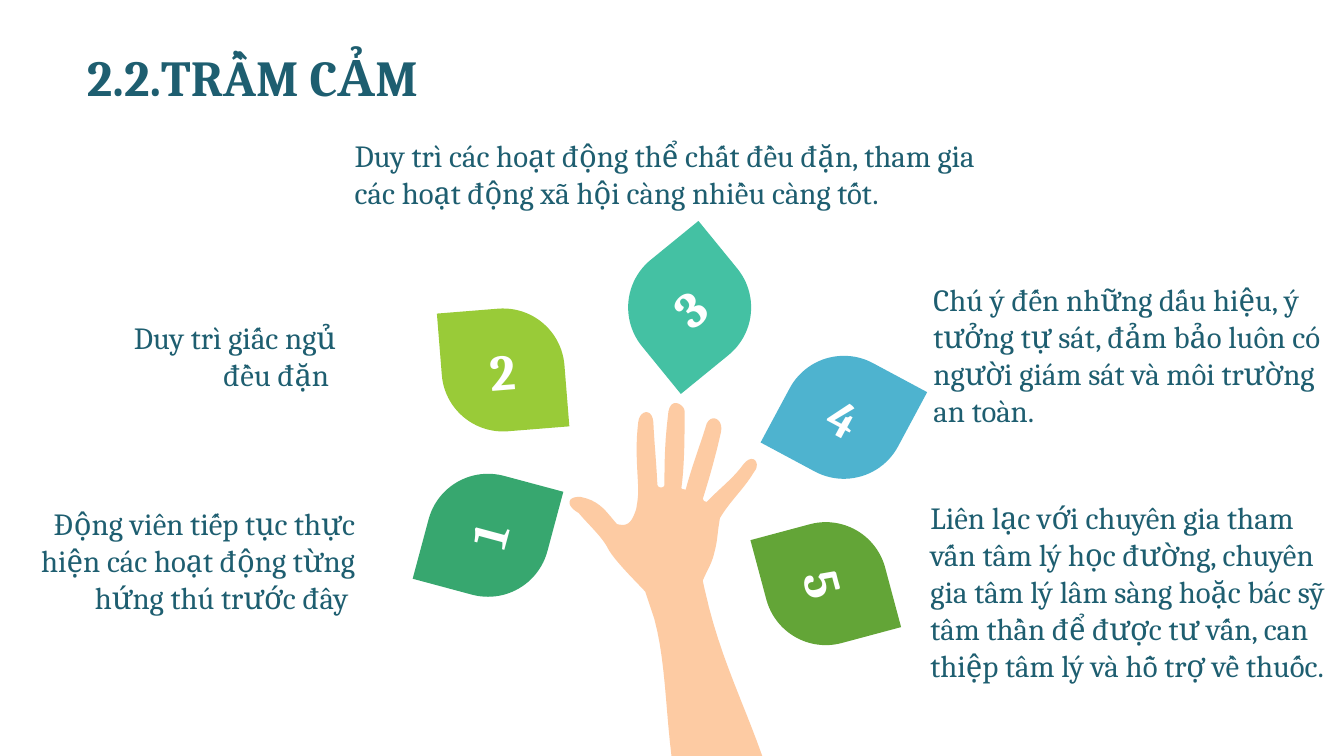
import dataclasses

import pptx
import pptx.dml.color
import pptx.enum.shapes
import pptx.enum.text
import pptx.util

ALIGN = pptx.enum.text.PP_ALIGN
ANCHOR = pptx.enum.text.MSO_ANCHOR
FIT = pptx.enum.text.MSO_AUTO_SIZE
rgb = pptx.dml.color.RGBColor.from_string


@dataclasses.dataclass(frozen=True)
class Theme:
    font: str = "Cambria"
    ink: str = "1E5E70"
    white: str = "FFFFFF"
    skin: str = "FDCBA3"
    leaves: tuple = ("37A76F", "99CB38", "44C1A3", "4EB3CF", "63A537")
    head: int = 36
    body: int = 22


theme = Theme()

# Slide on a grid of 1333 columns and 750 rows
COLS, ROWS = 1333, 750
prs = pptx.Presentation()
prs.slide_width, prs.slide_height = pptx.util.Inches(13.33), pptx.util.Inches(7.5)
cell = prs.slide_width // COLS
slide = prs.slides.add_slide(prs.slide_layouts[5])
shapes = slide.shapes


def grid(*cells):
    return [pptx.util.Emu(n * cell) for n in cells]


def write(sp, text, size=theme.body, color=theme.ink, bold=False,
          align=ALIGN.LEFT, anchor=ANCHOR.TOP, fit=FIT.NONE):
    tf = sp.text_frame
    tf.word_wrap, tf.auto_size, tf.vertical_anchor = True, fit, anchor
    p = tf.paragraphs[0]
    p.alignment = align
    r = p.add_run()
    r.text = text
    r.font.name, r.font.size, r.font.bold = theme.font, pptx.util.Pt(size), bold
    r.font.color.rgb = rgb(color)
    return p


# Title
title = shapes.title
title.left, title.top, title.width, title.height = grid(18, 40, 465, 79)
p = write(title, "2.2.TRẦM CẢM", size=theme.head, bold=True,
          align=ALIGN.CENTER, anchor=ANCHOR.MIDDLE)
p.line_spacing, p.space_before = 0.9, pptx.util.Pt(10)

# Hand: each row is a cubic curve (two controls, end) from the previous end
wrist_left, wrist_right = (666, 750), (756, 750)
curves = [
    (738, 699, 717, 657, 703, 602), (701, 593, 699, 586, 697, 576),
    (702, 564, 706, 560, 709, 546), (712, 534, 711, 532, 714, 514),
    (724, 497, 738, 485, 748, 468), (755, 460, 747, 448, 737, 461),
    (727, 475, 713, 485, 701, 498), (697, 497, 698, 496, 697, 495),
    (704, 473, 710, 451, 715, 429), (718, 416, 706, 410, 701, 420),
    (694, 443, 687, 460, 680, 486), (679, 485, 675, 486, 676, 483),
    (679, 459, 679, 432, 679, 408), (679, 402, 666, 393, 663, 408),
    (660, 433, 659, 449, 659, 481), (659, 484, 653, 485, 652, 481),
    (651, 459, 649, 440, 648, 419), (647, 404, 634, 407, 633, 419),
    (630, 444, 632, 461, 633, 485), (633, 494, 632, 499, 631, 505),
    (626, 521, 621, 522, 612, 520), (602, 509, 596, 497, 576, 493),
    (563, 492, 560, 501, 574, 509), (584, 521, 598, 533, 604, 546),
    (613, 560, 631, 577, 640, 587), (640, 587, 649, 614, 649, 614),
    (660, 655, 660, 702, 666, 750),
]
STEPS = 10
outline = [wrist_right]
for x1, y1, x2, y2, x3, y3 in curves:
    x0, y0 = outline[-1]
    for t in (i / STEPS for i in range(1, STEPS + 1)):
        a, b, c, d = (1 - t) ** 3, 3 * t * (1 - t) ** 2, 3 * t * t * (1 - t), t ** 3
        outline.append((a * x0 + b * x1 + c * x2 + d * x3,
                        a * y0 + b * y1 + c * y2 + d * y3))
fb = shapes.build_freeform(*grid(*wrist_left), scale=1.0)
fb.add_line_segments([(round(x * cell), round(y * cell)) for x, y in outline])
hand = fb.convert_to_shape()
hand.shadow.inherit = False
hand.fill.solid()
hand.fill.fore_color.rgb = rgb(theme.skin)
hand.line.fill.background()

# Numbered leaves: left, top, rotation, rounding of the two diagonals
LEAF = 122
leaves = [
    (423, 470, 285, (0, 0.5)),
    (438, 306, 355.4, (0, 0.5)),
    (623, 244, 320.8, (0.5, 0)),
    (776, 353, 28.2, (0.5, 0)),
    (758, 518, 75, (0.5, 0)),
]
for number, (left, top, turn, rounding) in enumerate(leaves, 1):
    sp = shapes.add_shape(pptx.enum.shapes.MSO_SHAPE.ROUND_2_DIAG_RECTANGLE,
                          *grid(left, top, LEAF, LEAF))
    sp.adjustments[0], sp.adjustments[1] = rounding
    sp.rotation = turn
    sp.shadow.inherit = False
    sp.fill.solid()
    sp.fill.fore_color.rgb = rgb(theme.leaves[number - 1])
    sp.line.fill.background()
    write(sp, str(number), size=theme.head, color=theme.white, bold=True,
          align=ALIGN.CENTER, anchor=ANCHOR.MIDDLE)

# Advice beside each leaf, in leaf order
advice = [
    ((-3, 496, 365, 121), ALIGN.RIGHT,
     "Động viên tiếp tục thực hiện các hoạt động từng hứng thú trước đây "),
    ((75, 311, 268, 84), ALIGN.RIGHT, "Duy trì giấc ngủ đều đặn "),
    ((342, 131, 657, 84), ALIGN.LEFT,
     "Duy trì các hoạt động thể chất đều đặn, tham gia các hoạt động xã hội "
     "càng nhiều càng tốt."),
    ((916, 274, 426, 158), ALIGN.LEFT,
     "Chú ý đến những dấu hiệu, ý tưởng tự sát, đảm bảo luôn có người giám sát "
     "và môi trường an toàn."),
    ((913, 490, 421, 232), ALIGN.LEFT,
     "Liên lạc với chuyên gia tham vấn tâm lý học đường, chuyên gia tâm lý lâm "
     "sàng hoặc bác sỹ tâm thần để được tư vấn, can thiệp tâm lý và hỗ trợ về thuốc."),
]
for box, align, text in advice:
    write(shapes.add_textbox(*grid(*box)), text, align=align, fit=FIT.SHAPE_TO_FIT_TEXT)

prs.save("out.pptx")
